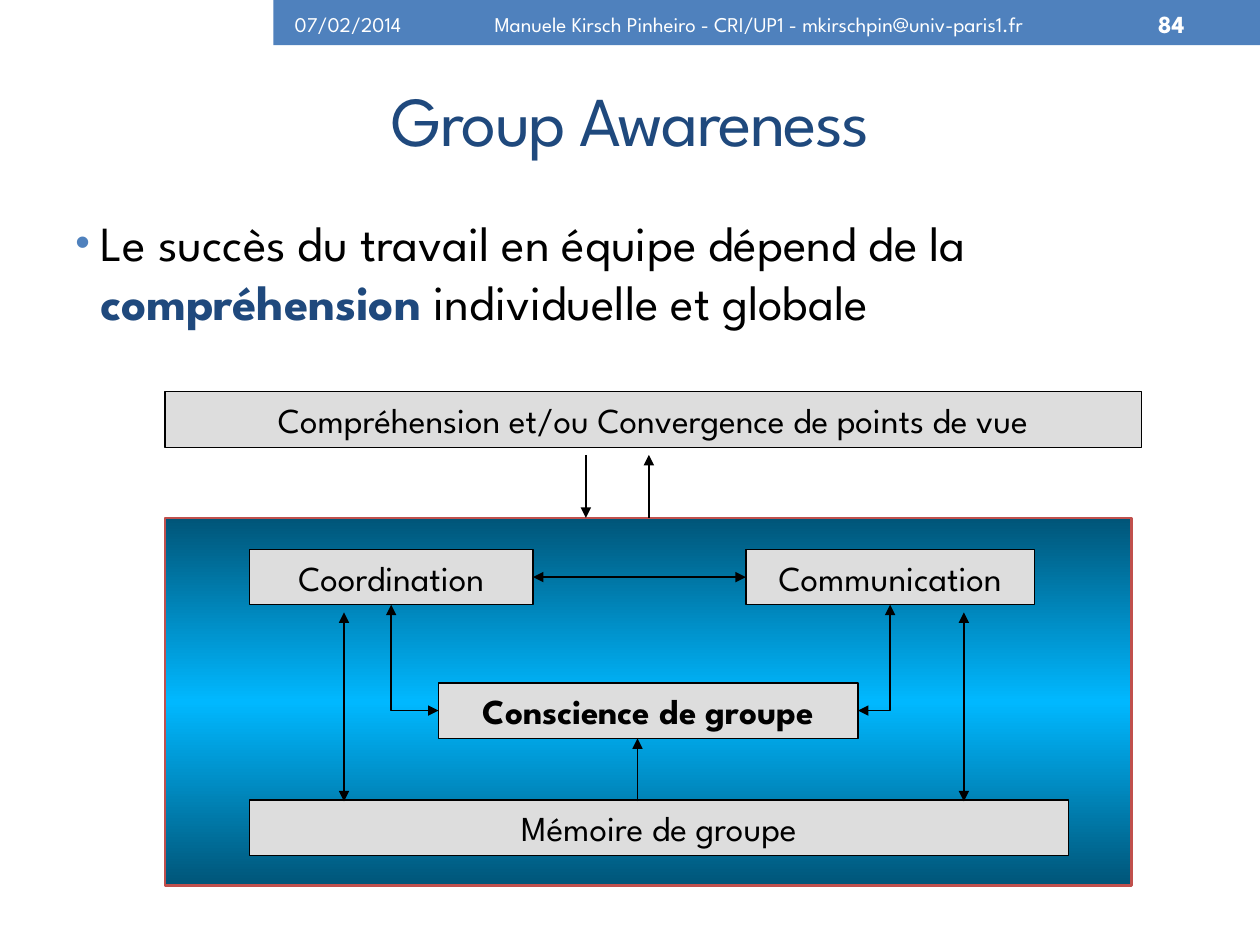
from copy import deepcopy

from lxml import etree
from pptx import Presentation
from pptx import util as u
from pptx.dml.color import RGBColor
from pptx.enum import shapes, text
from pptx.oxml.ns import qn

FONT = "League Spartan"
BLUE, NAVY, GREY, RED = "4F81BD", "1F497D", "DDDDDD", "C0504D"
BLACK, WHITE = "000000", "FFFFFF"
LEFT, CENTER, RIGHT = (text.PP_ALIGN.LEFT, text.PP_ALIGN.CENTER, text.PP_ALIGN.RIGHT)
TOP, MIDDLE = text.MSO_ANCHOR.TOP, text.MSO_ANCHOR.MIDDLE

# Content: position, anchor, alignment, runs of (words, font format)
HEAD = {"size": 12, "color": WHITE}
BODY = {"size": 28, "color": BLACK}
TEXTS = {
    "title": ((0.51, 0.44, 8.99, 1), MIDDLE, CENTER,
              [("Group Awareness", {"size": 40, "color": NAVY})]),
    "body": ((0.5, 1.64, 9, 4.95), TOP, LEFT,
             [("Le succès du travail en équipe dépend de la ", BODY),
              ("compréhension ", {**BODY, "color": NAVY, "bold": True}),
              ("individuelle et globale", BODY)]),
    "date": ((2.24, 0.02, 1.1, 0.34), MIDDLE, LEFT, [("07/02/2014", HEAD)]),
    "number": ((8.94, 0.02, 0.56, 0.34), MIDDLE, RIGHT,
               [("84", {"size": 14, "color": WHITE, "bold": True})]),
    "author": ((3.19, 0.02, 5.67, 0.34), MIDDLE, CENTER,
               [("Manuele Kirsch Pinheiro - CRI/UP1 - mkirschpin@univ-paris1.fr", HEAD)]),
}

# Diagram boxes: name, left, top, width, words, bold
BOX_H = 0.44
BOXES = [
    ("goal", 1.31, 3.11, 7.75, "Compréhension et/ou Convergence de points de vue", False),
    ("coordination", 1.98, 4.36, 2.25, "Coordination", False),
    ("communication", 5.92, 4.36, 2.29, "Communication", False),
    ("awareness", 3.48, 5.42, 3.33, "Conscience de groupe", True),
    ("memory", 1.98, 6.35, 6.5, "Mémoire de groupe", False),
]
PANEL = (1.31, 4.11, 7.67, 2.92)
GRADIENT = [(0, "005578"), (50, "00B8FF"), (100, "005578")]

# Joined links: from box, side, to box, side (0 top, 1 left, 2 bottom, 3 right)
LINKS = [
    ("awareness", 1, "coordination", 2),
    ("awareness", 3, "communication", 2),
    ("coordination", 3, "communication", 1),
]
# Vertical arrows: x, start y, end y, width, arrowhead at both ends
ARROWS = [
    (2.73, 4.86, 6.36, 0.75, True),
    (7.65, 4.86, 6.36, 0.75, True),
    (5.06, 6.36, 5.86, 0.75, False),
    (4.65, 3.61, 4.11, 1.5, False),
    (5.15, 4.11, 3.61, 1.5, False),
]


def rgb(value):
    return RGBColor.from_string(value)


def inches(values):
    return [u.Inches(v) for v in values]


def write(sp, anchor, align, runs):
    tf = sp.text_frame
    tf.word_wrap, tf.vertical_anchor = True, anchor
    p = tf.paragraphs[0]
    p.alignment = align
    for words, fmt in runs:
        r = p.add_run()
        r.text = words
        r.font.color.rgb = rgb(fmt["color"])
        for key, value in {"name": FONT, "size": u.Pt(fmt["size"]),
                           "bold": fmt.get("bold", False)}.items():
            setattr(r.font, key, value)
    return p


def add_rect(s, box, fill, line=None, width=0.75):
    sp = s.shapes.add_shape(shapes.MSO_SHAPE.RECTANGLE, *inches(box))
    sp.shadow.inherit = False
    if fill:
        sp.fill.solid()
        sp.fill.fore_color.rgb = rgb(fill)
    if line:
        sp.line.color.rgb = rgb(line)
        sp.line.width = u.Pt(width)
    else:
        sp.line.fill.background()
    return sp


def add_gradient(sp):
    sp.fill.gradient()
    sp.fill.gradient_angle = 90
    stops = sp._element.spPr.find(qn("a:gradFill")).find(qn("a:gsLst"))
    stops.insert(1, deepcopy(stops[0]))
    for stop, (position, color) in zip(sp.fill.gradient_stops, GRADIENT):
        stop.position = position / 100
        stop.color.rgb = rgb(color)


def add_arrow(s, start, end, width, both, elbow=False):
    kind = shapes.MSO_CONNECTOR.ELBOW if elbow else shapes.MSO_CONNECTOR.STRAIGHT
    c = s.shapes.add_connector(kind, *inches((*start, *end)))
    c.line.color.rgb = rgb(BLACK)
    c.line.width = u.Pt(width)
    spPr = c._element.spPr
    if elbow:
        spPr.find(qn("a:prstGeom")).set("prst", "bentConnector2")
    ln = spPr.find(qn("a:ln"))
    for tag in ["a:headEnd", "a:tailEnd"] if both else ["a:tailEnd"]:
        etree.SubElement(ln, qn(tag), type="triangle")
    etree.SubElement(spPr, qn("a:effectLst"))
    return c


def side_point(box, side):
    x, y, w, h = box
    return [(x + w / 2, y), (x, y + h / 2), (x + w / 2, y + h), (x + w, y + h / 2)][side]


def main():
    prs = Presentation()
    prs.slide_width, prs.slide_height = inches((10, 7.5))
    s = prs.slides.add_slide(prs.slide_layouts[6])

    # Header band and texts
    add_rect(s, (2.17, 0, 7.83, 0.36), BLUE)
    paragraphs = {}
    for name, (box, anchor, align, runs) in TEXTS.items():
        sp = s.shapes.add_textbox(*inches(box))
        paragraphs[name] = write(sp, anchor, align, runs)
    paragraphs["title"].runs[0].font._element.set("spc", "-100")

    # Bullet of the body text
    pPr = paragraphs["body"]._p.get_or_add_pPr()
    pPr.set("marL", str(u.Inches(0.2)))
    pPr.set("indent", str(u.Inches(-0.2)))
    color = etree.SubElement(pPr, qn("a:buClr"))
    etree.SubElement(color, qn("a:srgbClr"), val=BLUE)
    etree.SubElement(pPr, qn("a:buSzPct"), val="85000")
    etree.SubElement(pPr, qn("a:buFont"), typeface="Arial")
    etree.SubElement(pPr, qn("a:buChar"), char="•")

    # Diagram panel and boxes
    add_gradient(add_rect(s, PANEL, None, RED, 1.5))
    places, nodes = {}, {}
    for name, x, y, w, words, bold in BOXES:
        places[name] = (x, y, w, BOX_H)
        sp = nodes[name] = add_rect(s, places[name], GREY, BLACK)
        write(sp, MIDDLE, CENTER, [(words, {"size": 20, "color": BLACK, "bold": bold})])
        for edge, inset in {"left": 0.04, "right": 0.04, "top": 0.05, "bottom": 0.05}.items():
            setattr(sp.text_frame, f"margin_{edge}", u.Inches(inset))

    # Links and arrows
    for a, a_side, b, b_side in LINKS:
        c = add_arrow(s, side_point(places[a], a_side), side_point(places[b], b_side),
                      1, True, elbow=b_side == 2)
        c.begin_connect(nodes[a], a_side)
        c.end_connect(nodes[b], b_side)
    for x, y1, y2, width, both in ARROWS:
        add_arrow(s, (x, y1), (x, y2), width, both)

    prs.save("out.pptx")


if __name__ == "__main__":
    main()
